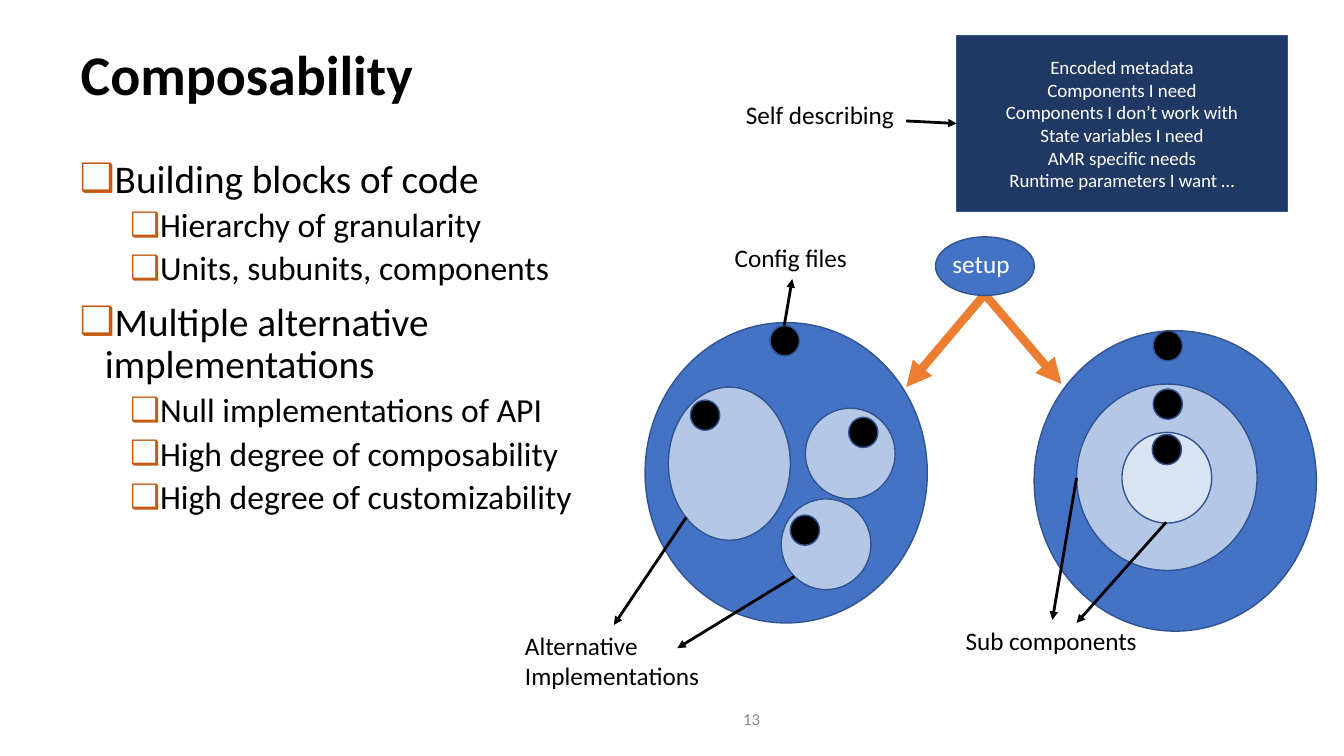
from dataclasses import dataclass

from lxml import etree
from pptx import Presentation, util as u
from pptx.dml import color as col
from pptx.enum import shapes as sh, text as tx
from pptx.oxml import ns


@dataclass(frozen=True)
class Theme:
    font: str = "Calibri"
    black: str = "000000"
    white: str = "FFFFFF"
    gray: str = "8C8C8C"
    blue: str = "4472C4"
    edge: str = "325491"
    light: str = "B4C7E7"
    pale: str = "DAE3F3"
    navy: str = "203864"
    orange: str = "ED7D31"
    rust: str = "C55A11"
    title: float = 40
    lists: tuple = (28, 24)
    label: float = 18
    note: float = 13.5
    page: float = 12


def rgb(code):
    return col.RGBColor.from_string(code)


def add(node, tag, **attrs):
    return etree.SubElement(node, ns.qn(tag), attrs)


def put(item, values):
    for name, value in values.items():
        setattr(item, name, value)


class Board:
    def __init__(self, slide, theme):
        self.slide, self.theme = slide, theme

    def words(self, para, line, size, color, bold=False):
        run = para.add_run()
        run.text = line
        put(run.font, {"name": self.theme.font, "size": u.Pt(size), "bold": bold})
        run.font.color.rgb = rgb(color)

    def place(self, item, box):
        names = ("left", "top", "width", "height")
        put(item, {name: u.Pt(value) for name, value in zip(names, box)})

    def fill(self, frame, lines, size, color, align):
        for i, line in enumerate(lines):
            para = frame.add_paragraph() if i else frame.paragraphs[0]
            para.alignment = align
            self.words(para, line, size, color)

    def title(self, line, box):
        item = self.slide.shapes.title
        self.place(item, box)
        put(item.text_frame, {"vertical_anchor": tx.MSO_ANCHOR.MIDDLE,
                              "auto_size": tx.MSO_AUTO_SIZE.NONE})
        para = item.text_frame.paragraphs[0]
        put(para, {"alignment": tx.PP_ALIGN.LEFT, "line_spacing": 0.9})
        self.words(para, line, self.theme.title, self.theme.black, True)

    def list(self, rows, box):
        item = self.slide.placeholders[1]
        self.place(item, box)
        frame = item.text_frame
        put(frame, {"auto_size": tx.MSO_AUTO_SIZE.NONE, "word_wrap": True})
        for i, (level, line) in enumerate(rows):
            para = frame.add_paragraph() if i else frame.paragraphs[0]
            put(para, {"level": level, "line_spacing": 0.9,
                       "alignment": tx.PP_ALIGN.LEFT,
                       "space_before": u.Pt((10, 5)[level] if i else 0)})
            props = para._p.get_or_add_pPr()
            props.set("marL", str(u.Pt((18, 54)[level])))
            props.set("indent", str(u.Pt(-18)))
            add(add(props, "a:buClr"), "a:srgbClr", val=self.theme.rust)
            add(props, "a:buChar", char="❑")
            self.words(para, line, self.theme.lists[level], self.theme.black)

    def shape(self, kind, box, color):
        item = self.slide.shapes.add_shape(kind, *map(u.Pt, box))
        item.shadow.inherit = False
        item.fill.solid()
        item.fill.fore_color.rgb = rgb(color)
        item.line.color.rgb = rgb(self.theme.edge)
        item.line.width = u.Pt(1)
        return item

    def oval(self, box, color):
        return self.shape(sh.MSO_SHAPE.OVAL, box, color)

    def panel(self, lines, box):
        item = self.shape(sh.MSO_SHAPE.RECTANGLE, box, self.theme.navy)
        item.text_frame.vertical_anchor = tx.MSO_ANCHOR.MIDDLE
        self.fill(item.text_frame, lines, self.theme.note, self.theme.white,
                  tx.PP_ALIGN.CENTER)
        return item

    def label(self, lines, box, color):
        frame = self.slide.shapes.add_textbox(*map(u.Pt, box)).text_frame
        put(frame, {"word_wrap": False,
                    "auto_size": tx.MSO_AUTO_SIZE.SHAPE_TO_FIT_TEXT})
        self.fill(frame, lines, self.theme.label, color, tx.PP_ALIGN.LEFT)

    def page(self, line, box):
        frame = self.slide.shapes.add_textbox(*map(u.Pt, box)).text_frame
        put(frame, {"word_wrap": True, "vertical_anchor": tx.MSO_ANCHOR.MIDDLE})
        self.fill(frame, [line], self.theme.page, self.theme.gray,
                  tx.PP_ALIGN.RIGHT)

    def arrow(self, ends, color, width):
        item = self.slide.shapes.add_connector(
            sh.MSO_CONNECTOR.STRAIGHT, *map(u.Pt, ends))
        item.line.color.rgb = rgb(color)
        item.line.width = u.Pt(width)
        props = item._element.spPr
        add(props.find(ns.qn("a:ln")), "a:tailEnd", type="triangle")
        add(props, "a:effectLst")
        return item


def main():
    deck = Presentation()
    put(deck, {"slide_width": u.Pt(960), "slide_height": u.Pt(540)})
    look = Theme()
    board = Board(deck.slides.add_slide(deck.slide_layouts[1]), look)

    # Title and list
    board.title("Composability", (50.4, 2.9, 828, 104.4))
    board.list([
        (0, "Building blocks of code"),
        (1, "Hierarchy of granularity"),
        (1, "Units, subunits, components"),
        (0, "Multiple alternative implementations"),
        (1, "Null implementations of API"),
        (1, "High degree of composability"),
        (1, "High degree of customizability"),
    ], (49.7, 110.2, 429.1, 342.7))

    # Units and their nested parts
    big, small = (201.6, 214.6), (64.1, 64.8)
    for spot, size, color in (
        ((460.8, 230.4), big, look.blue),
        ((738.7, 236.2), big, look.blue),
        ((477.4, 276.5), (87.1, 109.4), look.light),
        ((575.3, 291.6), small, look.light),
        ((558, 356.4), small, look.light),
        ((769, 274.3), (128.9, 133.2), look.light),
        ((801.4, 308.9), small, look.pale),
    ):
        board.oval(spot + size, color)

    # Setup feeding both units
    for end in ((758.2, 274.3), (647.3, 276.5)):
        board.arrow((703.4, 210.2) + end, look.orange, 6)
    board.oval((668.2, 169.2, 70.6, 41.8), look.blue)
    board.label(["setup"], (673.2, 173.5, 56.2, 28.8), look.white)

    # Config dots
    for spot in ((823, 310.3), (564.5, 367.9), (606.2, 298.1), (493.2, 285.8),
                 (823.7, 277.9), (823.7, 236.2), (550.1, 232.6)):
        board.oval(spot + (20.9, 21.6), look.black)

    # Metadata panel
    panel = board.panel([
        "Encoded metadata",
        "Components I need",
        "Components I don’t work with",
        "State variables I need",
        "AMR specific needs",
        "Runtime parameters I want …",
    ], (683.3, 25.2, 236.2, 126))
    link = board.arrow((647.3, 86.4, 683.3, 88.2), look.black, 2)
    link.end_connect(panel, 1)

    # Labels and their arrows
    for ends in ((560.2, 232.6, 565.9, 199.4), (490.3, 369.4, 438.5, 446.4),
                 (567.4, 411.8, 483.8, 463), (769, 341.3, 751.7, 442.8),
                 (833, 373, 769, 445)):
        board.arrow(ends, look.black, 2)
    for lines, box in (
        (["Self describing"], (525.6, 67.7, 121.7, 28.8)),
        (["Config files"], (517.7, 169.9, 95.8, 28.8)),
        (["Alternative", "Implementations"], (367.9, 446.4, 140.4, 51.1)),
        (["Sub components"], (682.6, 442.8, 138.2, 28.8)),
    ):
        board.label(lines, box, look.black)

    # Page number
    board.page("13", (334.1, 499, 216, 28.8))
    deck.save("out.pptx")


if __name__ == "__main__":
    main()
